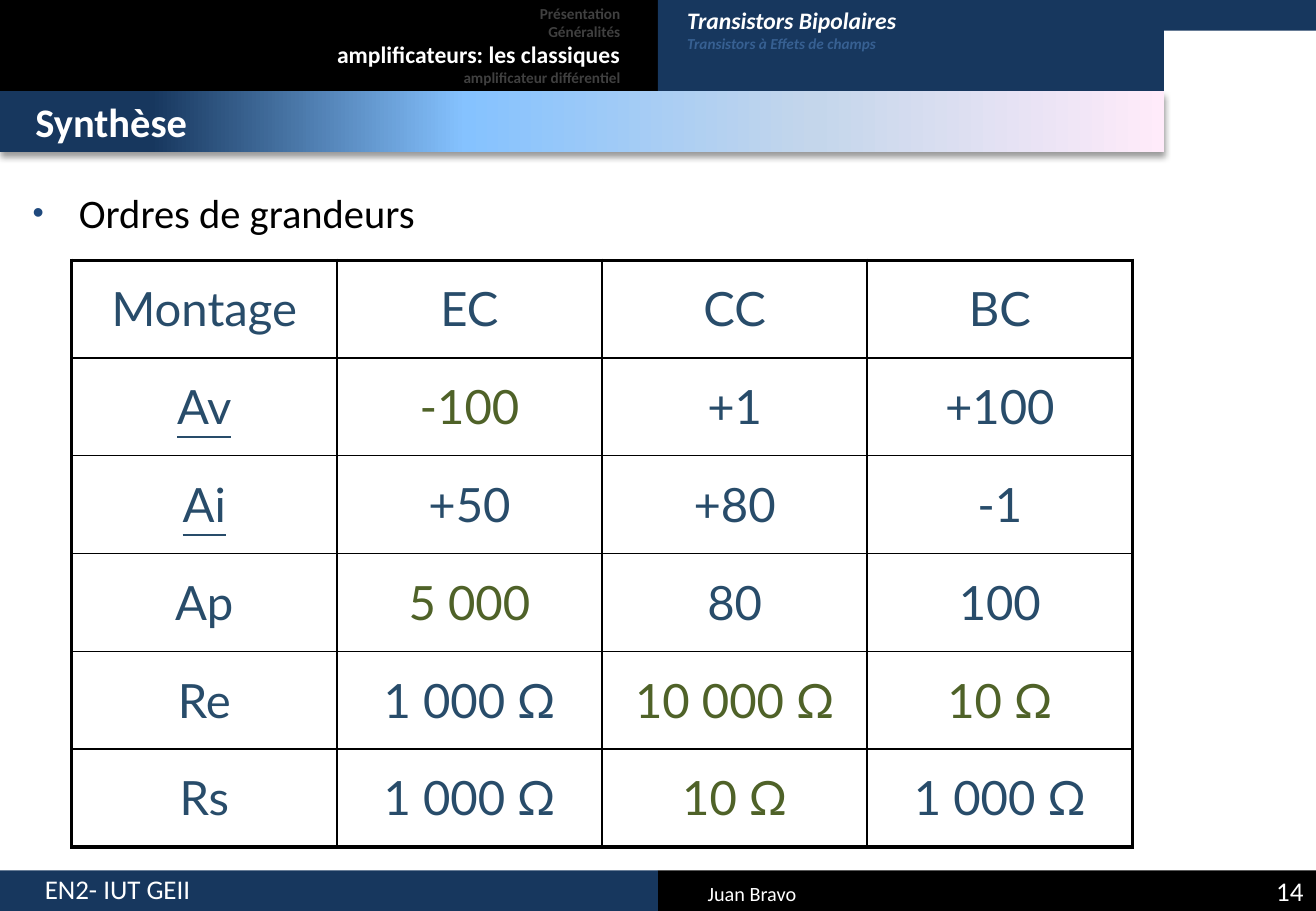
"""Build the summary slide on the orders of magnitude of transistor stages."""
from pptx import Presentation
from pptx.dml.color import RGBColor as Rgb
from pptx.enum.shapes import MSO_SHAPE as Kind
from pptx.enum.text import MSO_ANCHOR as Anchor, MSO_AUTO_SIZE as Auto, PP_ALIGN as Align
from pptx.oxml import parse_xml
from pptx.util import Cm, Pt

INK = {"navy": "17375E", "black": "000000", "white": "FFFFFF", "gray": "404040",
       "steel": "376092", "dot": "1F497D", "slate": "284C6A", "green": "4F6228"}
FADE = [(13, "17375E"), (40, "85C2FF"), (70, "C4D6EB"), (100, "FFEBFA")]
PARTS = ["Présentation", "Généralités", "amplificateurs: les classiques",
         "amplificateur différentiel"]
THEMES = ["Transistors Bipolaires", "Transistors à Effets de champs"]
ROWS = [["Montage", "EC", "CC", "BC"],
        ["Av", "-100", "+1", "+100"],
        ["Ai", "+50", "+80", "-1"],
        ["Ap", "5 000", "80", "100"],
        ["Re", "1 000 Ω", "10 000 Ω", "10 Ω"],
        ["Rs", "1 000 Ω", "10 Ω", "1 000 Ω"]]
GREEN = {(1, 1), (3, 1), (4, 2), (4, 3), (5, 2)}
LINED = {"Av", "Ai"}

WIDE, HIGH, HALF = 27.52, 19.05, 13.76
BAND, HEAD, FOOT = 24.34, 1.9, 18.2
BARS = [(23.92, 0, 3.6, 0.64, "navy"),
        (HALF, FOOT, HALF, 0.85, "black"),
        (0, FOOT, HALF, 0.85, "navy")]
NOTES = [("EN2- IUT GEII", (0.69, 18.11, 6.65, 0.94), 16, Align.LEFT, Anchor.TOP),
         ("Juan Bravo", (14.55, 18.29, 5.28, 0.76), 12, Align.LEFT, Anchor.TOP),
         ("14", (25.91, FOOT, 1.6, 0.85), 16, Align.RIGHT, Anchor.MIDDLE)]
NS = 'xmlns:a="http://schemas.openxmlformats.org/drawingml/2006/main"'


def node(body):
    tag, rest = body[1:].split(" ", 1)
    return parse_xml(f"<{tag} {NS} {rest}")


def put(par, text, size=24, ink="white", font="Calibri", bold=False, slant=False, under=False):
    run = par.add_run()
    run.text = text
    face = run.font
    face.name, face.size, face.bold = font, Pt(size), bold
    face.italic, face.underline = slant, under
    face.color.rgb = Rgb.from_string(INK[ink])


def paint(shape, ink):
    shape.fill.solid()
    shape.fill.fore_color.rgb = Rgb.from_string(INK[ink])
    shape.line.fill.background()


def place(shape, box, anchor=Anchor.TOP):
    shape.left, shape.top, shape.width, shape.height = map(Cm, box)
    frame = shape.text_frame
    frame.word_wrap, frame.auto_size = True, Auto.NONE
    frame.vertical_anchor = anchor
    frame.margin_left = frame.margin_right = Cm(0.25)
    frame.margin_top = frame.margin_bottom = Cm(0.13)
    return frame


def indent(par, left, first, dot=None):
    props = par._p.get_or_add_pPr()
    props.set("marL", str(Cm(left)))
    props.set("indent", str(Cm(first)))
    par.space_before = Pt(0)
    if dot:
        props.append(node(f'<a:buClr ><a:srgbClr val="{INK["dot"]}"/></a:buClr>'))
        props.append(node('<a:buSzPct val="79000"/>'))
        props.append(node('<a:buFont typeface="Arial"/>'))
        props.append(node(f'<a:buChar char="{dot}"/>'))
    else:
        props.append(node("<a:buNone />"))


def edge(cell, row, col):
    outer = {"L": col == 0, "R": col == len(ROWS[0]) - 1,
             "T": row == 0, "B": row == len(ROWS) - 1}
    props = cell._tc.get_or_add_tcPr()
    for spot, (side, thick) in enumerate(outer.items()):
        width = Pt(2.25 if thick else 1)
        props.insert(spot, node(f'<a:ln{side} w="{width}"><a:solidFill><a:srgbClr '
                                f'val="{INK["black"]}"/></a:solidFill></a:ln{side}>'))


def draw_bars(slide):
    for x, y, w, h, ink in BARS:
        bar = slide.shapes.add_shape(Kind.RECTANGLE, Cm(x), Cm(y), Cm(w), Cm(h))
        bar.shadow.inherit = False
        paint(bar, ink)
    for text, box, size, align, anchor in NOTES:
        note = slide.shapes.add_textbox(*map(Cm, box))
        par = place(note, box, anchor).paragraphs[0]
        par.alignment = align
        put(par, text, size=size)


def draw_head(title, theme, band):
    frame = place(title, (0, 0, HALF, HEAD), Anchor.MIDDLE)
    frame.margin_right = Cm(0.79)
    paint(title, "black")
    par = frame.paragraphs[0]
    indent(par, 0.48, 0)
    par.alignment = Align.RIGHT
    for spot, text in enumerate(PARTS):
        if spot:
            par.add_line_break()
        now = spot == 2
        put(par, text, size=14 if now else 9, ink="white" if now else "gray", bold=True)

    frame = place(theme, (HALF, 0, BAND - HALF, HEAD))
    paint(theme, "navy")
    for spot, text in enumerate(THEMES):
        par = frame.add_paragraph() if spot else frame.paragraphs[0]
        indent(par, 0.97, -0.61)
        put(par, text, size=9 if spot else 14, ink="steel" if spot else "white",
            bold=True, slant=True)

    frame = place(band, (0, HEAD, BAND, 1.27), Anchor.MIDDLE)
    indent(frame.paragraphs[0], 0.97, -0.48)
    put(frame.paragraphs[0], "Synthèse", bold=True)
    band.fill.gradient()
    band.fill.gradient_angle = 0
    stops = band._element.spPr.find(".//{*}gsLst")
    stops.clear()
    for spot, tint in FADE:
        stops.append(node(f'<a:gs pos="{spot * 1000}"><a:srgbClr val="{tint}"/></a:gs>'))
    band.line.fill.background()
    band._element.spPr.append(node(
        f'<a:effectLst ><a:outerShdw blurRad="{Pt(4)}" dist="{Pt(3)}" dir="5400000">'
        f'<a:srgbClr val="{INK["black"]}"><a:alpha val="40000"/></a:srgbClr>'
        '</a:outerShdw></a:effectLst>'))


def draw_grid(slide):
    shape = slide.shapes.add_table(len(ROWS), len(ROWS[0]), Cm(1.5), Cm(5.44),
                                   Cm(22.18), Cm(12.27))
    grid = shape.table
    grid.first_row = grid.horz_banding = False
    for r, row in enumerate(ROWS):
        for c, text in enumerate(row):
            cell = grid.cell(r, c)
            cell.fill.background()
            cell.vertical_anchor = Anchor.TOP
            edge(cell, r, c)
            par = cell.text_frame.paragraphs[0]
            par.alignment, par.line_spacing = Align.CENTER, 1.25
            put(par, text, size=28, ink="green" if (r, c) in GREEN else "slate",
                font="Lato", under=text in LINED)


def main():
    deck = Presentation()
    deck.slide_width, deck.slide_height = Cm(WIDE), Cm(HIGH)
    slide = deck.slides.add_slide(deck.slide_layouts[4])
    title, band, body, theme, spare = slide.placeholders
    spare._element.getparent().remove(spare._element)
    draw_bars(slide)
    draw_head(title, theme, band)
    par = place(body, (0.43, 3.81, 24.51, 2.26)).paragraphs[0]
    indent(par, 0.97, -0.97, dot="•")
    put(par, "Ordres de grandeurs", ink="black")
    draw_grid(slide)
    deck.save("out.pptx")


if __name__ == "__main__":
    main()
